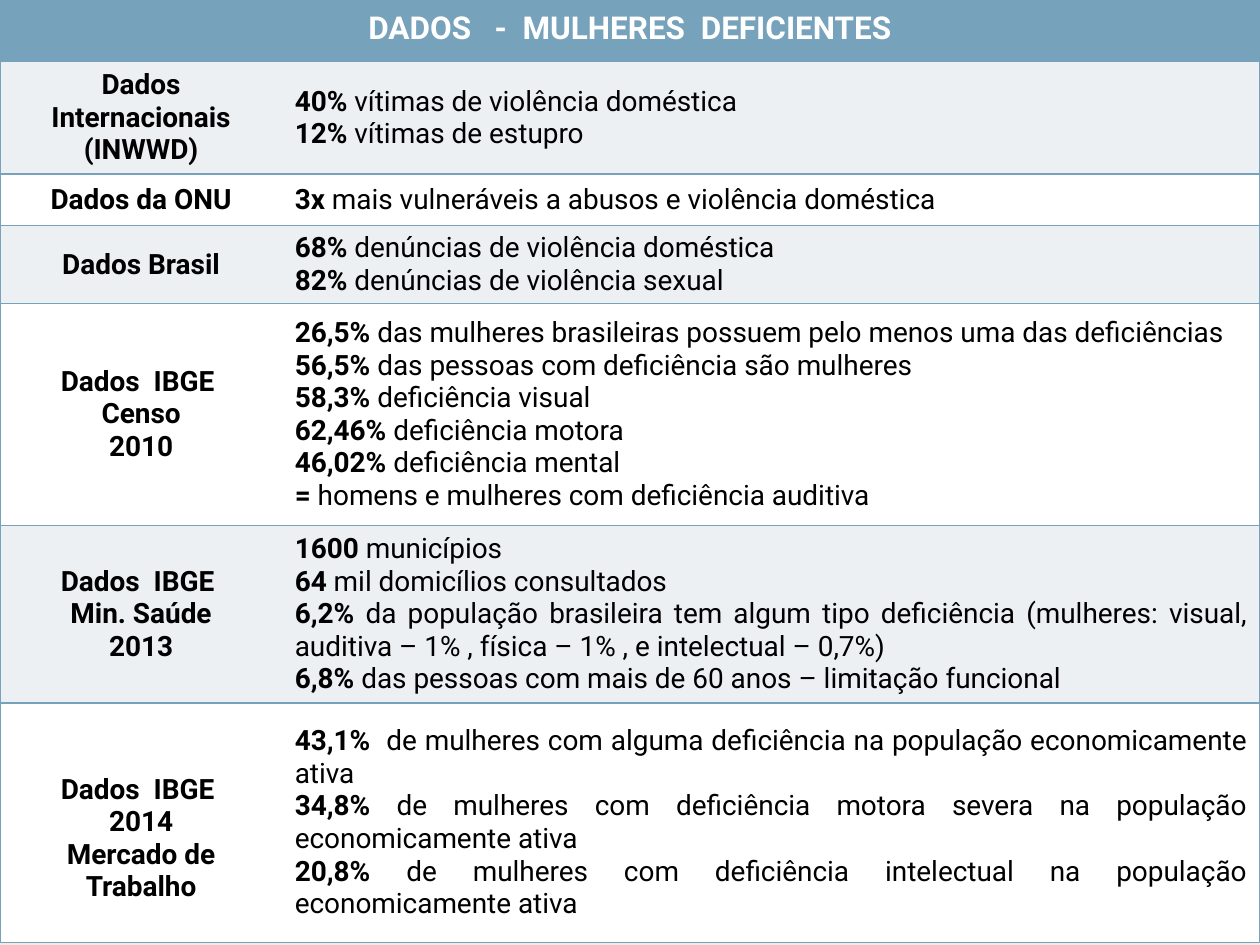
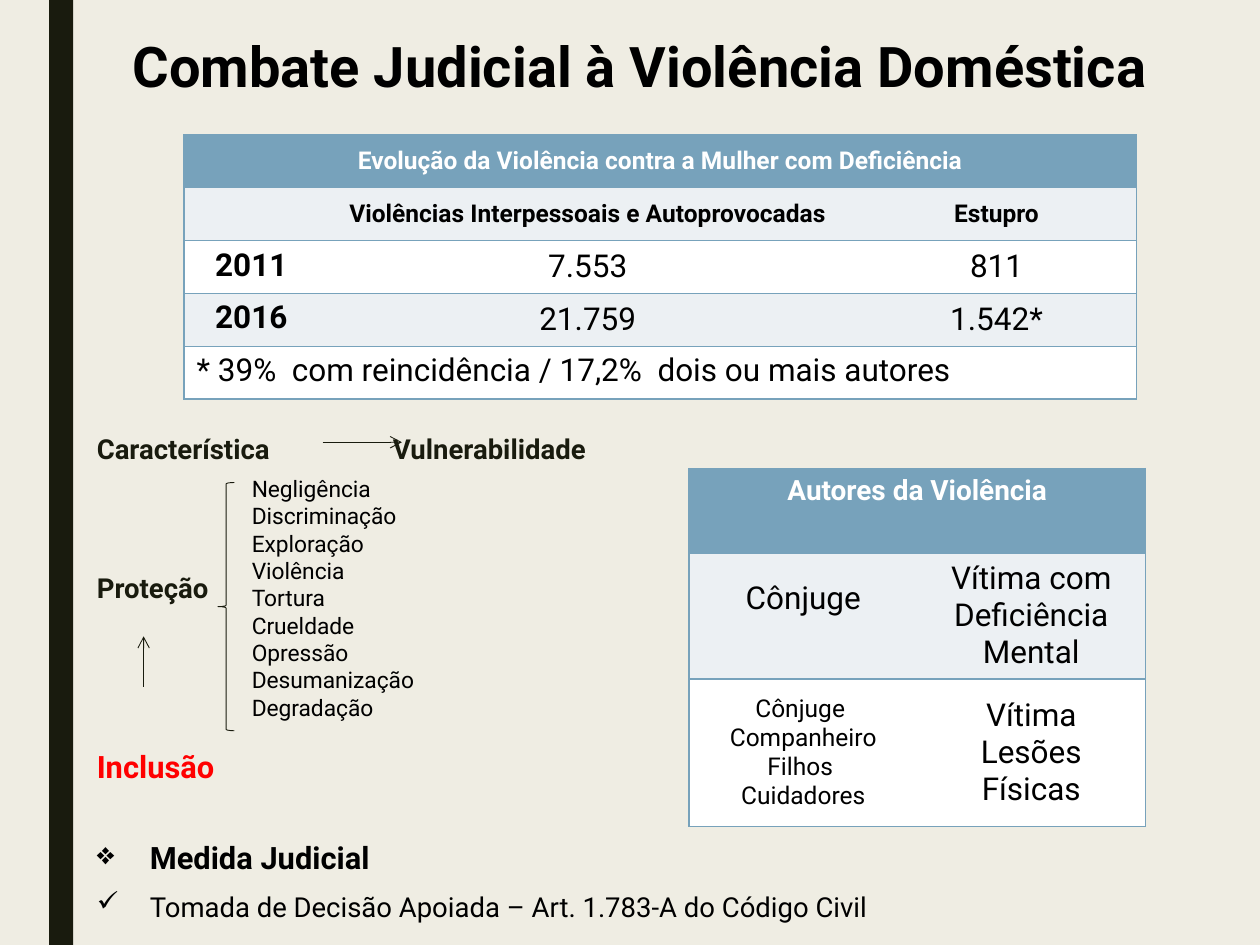
import pptx
import pptx.util
import pptx.dml.color
import pptx.enum.dml
import pptx.enum.shapes
import pptx.enum.text
import pptx.oxml
import pptx.oxml.ns

Inches, Pt = pptx.util.Inches, pptx.util.Pt
RGB = pptx.dml.color.RGBColor.from_string
ALIGN = pptx.enum.text.PP_ALIGN
ANCHOR = pptx.enum.text.MSO_ANCHOR
SHAPE = pptx.enum.shapes.MSO_SHAPE
NS = pptx.oxml.ns.nsdecls("a")
FONT = "Roboto"
COLORS = {"paper": "EFEDE3", "dark": "191B0E", "blue": "77A2BB", "pale": "ECF0F3",
          "white": "FFFFFF", "black": "000000", "red": "FF0000"}


def write(frame, text, size=16, color="black", bold=False, align=ALIGN.LEFT,
          anchor=ANCHOR.MIDDLE, **margins):
    """Write one paragraph a line; what stands before a | is bold."""
    frame.word_wrap = True
    frame.vertical_anchor = anchor
    for name, inches in margins.items():
        setattr(frame, name, Inches(inches))
    for number, line in enumerate(text.split("\n")):
        para = frame.add_paragraph() if number else frame.paragraphs[0]
        para.alignment = align
        lead, mark, rest = line.partition("|")
        for words, heavy in ((lead, bold or bool(mark)), (rest, bold)):
            if words:
                span = para.add_run()
                span.text = words
                look = {"name": FONT, "size": Pt(size), "bold": heavy}
                for name, value in look.items():
                    setattr(span.font, name, value)
                span.font.color.rgb = RGB(COLORS[color])


def draw_table(page, place, widths, heights, rows):
    """Draw a ruled, banded table; a row with a single cell spans all columns."""
    last = len(widths) - 1
    table = page.shapes.add_table(len(rows), len(widths), *map(Inches, place)).table
    table.first_row = table.horz_banding = False
    for column, width in zip(table.columns, widths):
        column.width = Inches(width)
    for r, (row, height, cells) in enumerate(zip(table.rows, heights, rows)):
        row.height = Inches(height)
        whole = len(cells) == 1
        if whole:
            table.cell(r, 0).merge(table.cell(r, last))
        band = "blue" if r == 0 else ("white", "pale")[r % 2]
        for c in range(len(widths)):
            cell = table.cell(r, c)
            cell.fill.solid()
            cell.fill.fore_color.rgb = RGB(COLORS[band])
            ruled = {"L": c == 0, "R": c == last or whole, "T": True, "B": True}
            for place_in_order, (side, drawn) in enumerate(ruled.items()):
                paint = (f'<a:solidFill><a:srgbClr val="{COLORS["blue"]}"/></a:solidFill>'
                         if drawn else "<a:noFill/>")
                cell._tc.tcPr.insert(place_in_order, pptx.oxml.parse_xml(
                    f'<a:ln{side} {NS} w="12700">{paint}</a:ln{side}>'))
        for c, (text, look) in enumerate(cells):
            cell = table.cell(r, c)
            anchor = look.get("anchor", ANCHOR.MIDDLE)
            for name in ("margin_top", "margin_bottom"):
                setattr(cell, name, Inches(look.get(name, 0.05)))
            kept = {k: v for k, v in look.items() if not k.startswith("margin")}
            if text:
                write(cell.text_frame, text, **kept)
            cell.vertical_anchor = anchor


deck = pptx.Presentation()
deck.slide_width, deck.slide_height = Inches(10), Inches(7.5)
backdrop = deck.slide_master.background.fill
backdrop.solid()
backdrop.fore_color.rgb = RGB(COLORS["paper"])

centred = {"align": ALIGN.CENTER}
heading = {**centred, "bold": True}
header = {**heading, "color": "white"}

# Slide 1: figures by source
page = deck.slides.add_slide(deck.slide_layouts[6])
sources = [
    ("Dados Internacionais\n(INWWD)",
     "40% |vítimas de violência doméstica\n12% |vítimas de estupro"),
    ("Dados da ONU", "3x| mais vulneráveis a abusos e violência doméstica"),
    ("Dados Brasil",
     "68% |denúncias de violência doméstica\n82% |denúncias de violência sexual"),
    ("Dados  IBGE \nCenso\n2010",
     "26,5% |das mulheres brasileiras possuem pelo menos uma das deficiências\n"
     "56,5% |das pessoas com deficiência são mulheres\n"
     "58,3% |deficiência visual\n"
     "62,46% |deficiência motora\n"
     "46,02% |deficiência mental\n"
     "= |homens e mulheres com deficiência auditiva"),
    ("Dados  IBGE \nMin. Saúde\n2013",
     "1600| municípios \n"
     "64| mil domicílios consultados\n"
     "6,2% |da população brasileira tem algum tipo deficiência (mulheres: visual, "
     "auditiva – 1% , física – 1% , e intelectual – 0,7%)\n"
     "6,8% |das pessoas com mais de 60 anos – limitação funcional"),
    ("Dados  IBGE \n2014\nMercado de Trabalho",
     "43,1%  |de mulheres com alguma deficiência na população economicamente ativa \n"
     "34,8% |de mulheres com deficiência motora severa na população economicamente ativa \n"
     "20,8% |de mulheres com deficiência intelectual na população economicamente ativa "),
]
rows = [[("DADOS   -  MULHERES  DEFICIENTES", {**header, "size": 18})]]
for source, figures in sources:
    lowered = {"margin_top": 0.3} if "Mercado" in source else {}
    rows.append([(source, {**heading, **lowered}), (figures, {"align": ALIGN.JUSTIFY})])
draw_table(page, (0, -0.04, 10, 7.52), (2.24, 7.76),
           (0.53, 0.89, 0.41, 0.62, 1.76, 1.41, 1.9), rows)

# Slide 2: judicial response
page = deck.slides.add_slide(deck.slide_layouts[5])
title = page.shapes.title
for name, inches in {"left": 0.59, "top": 0.2, "width": 8.98, "height": 0.64}.items():
    setattr(title, name, Inches(inches))
title.text_frame.auto_size = pptx.enum.text.MSO_AUTO_SIZE.NONE
write(title.text_frame, "Combate Judicial à Violência Doméstica", size=32, **heading)

side_band = page.shapes.add_shape(SHAPE.RECTANGLE, Inches(0.39), 0, Inches(0.19), Inches(7.5))
side_band.shadow.inherit = False
side_band.fill.solid()
side_band.fill.fore_color.rgb = RGB(COLORS["dark"])
side_band.line.fill.background()

labels = [
    ("Característica", 0.67, 3.36, 2, 15.7, "dark"),
    ("Vulnerabilidade", 3.02, 3.36, 2, 15.7, "dark"),
    ("Proteção", 0.67, 4.46, 1.2, 15.7, "dark"),
    ("Inclusão", 0.67, 5.88, 1.5, 17.6, "red"),
]
for text, left, top, width, size, color in labels:
    box = page.shapes.add_textbox(*map(Inches, (left, top, width, 0.4)))
    write(box.text_frame, text, size=size, color=color, bold=True)

box = page.shapes.add_textbox(*map(Inches, (1.9, 3.72, 1.8, 2.07)))
write(box.text_frame,
      "Negligência\nDiscriminação\nExploração\nViolência\nTortura\n"
      "Crueldade\nOpressão\nDesumanização\nDegradação", size=13, anchor=ANCHOR.TOP)

box = page.shapes.add_textbox(*map(Inches, (0.67, 6.61, 8.82, 0.76)))
write(box.text_frame, "Medida Judicial|\nTomada de Decisão Apoiada – Art. 1.783-A do Código Civil",
      size=15.7, anchor=ANCHOR.TOP)
measure, support = box.text_frame.paragraphs
measure.runs[0].font.size = Pt(17.6)
support.space_before = Pt(8)
for para, bullet in ((measure, "❖"), (support, "✓")):
    properties = para._p.get_or_add_pPr()
    properties.set("marL", str(Inches(0.42)))
    properties.set("indent", str(Inches(-0.42)))
    properties.append(pptx.oxml.parse_xml(f'<a:buChar {NS} char="{bullet}"/>'))

brace = page.shapes.add_shape(SHAPE.LEFT_BRACE, *map(Inches, (1.73, 3.83, 0.13, 1.97)))
brace.shadow.inherit = False
brace.fill.background()
strokes = [brace]
for ends in ((2.56, 3.51, 3.19, 3.51), (1.14, 5.45, 1.14, 5.05)):
    arrow = page.shapes.add_connector(pptx.enum.shapes.MSO_CONNECTOR.STRAIGHT,
                                      *map(Inches, ends))
    strokes.append(arrow)
for stroke in strokes:
    stroke.line.color.rgb = RGB(COLORS["dark"])
    stroke.line.width = Pt(0.5)
for arrow in strokes[1:]:
    arrow.line._ln.append(pptx.oxml.parse_xml(f'<a:tailEnd {NS} type="arrow"/>'))
    arrow._element.spPr.append(pptx.oxml.parse_xml(f"<a:effectLst {NS}/>"))

number = {**centred, "size": 18}
year = {**heading, "size": 18, "anchor": ANCHOR.TOP}
column_head = {**heading, "size": 14}
draw_table(page, (1.46, 1.07, 7.56, 2.1), (1.07, 4.27, 2.22), [0.42] * 5, [
    [("Evolução da Violência contra a Mulher com Deficiência", {**header, "size": 14})],
    [("", {}), ("Violências Interpessoais e Autoprovocadas", column_head),
     ("Estupro", column_head)],
    [("2011", year), ("7.553", number), ("811", number)],
    [("2016", year), ("21.759", number), ("1.542*", number)],
    [("* 39%  com reincidência / 17,2%  dois ou mais autores",
      {"size": 18, "anchor": ANCHOR.TOP})],
])
draw_table(page, (5.47, 3.72, 3.62, 2.84), (1.81, 1.81), (0.67, 1, 1.17), [
    [("Autores da Violência", {**header, "anchor": ANCHOR.TOP})],
    [("Cônjuge", {**number, "margin_bottom": 0.33}), ("Vítima com Deficiência Mental", number)],
    [("Cônjuge \nCompanheiro\nFilhos \nCuidadores", {**centred, "size": 14}),
     ("Vítima\nLesões Físicas", number)],
])

deck.save("out.pptx")
